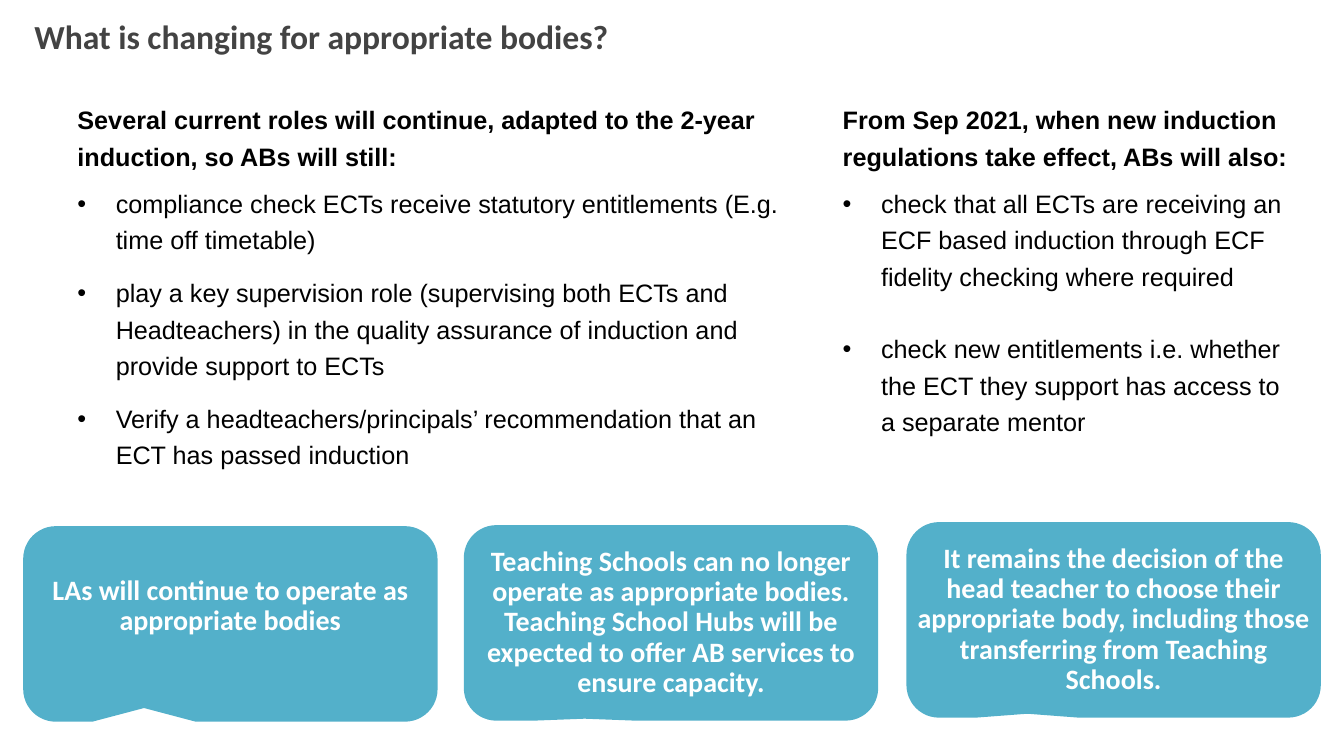
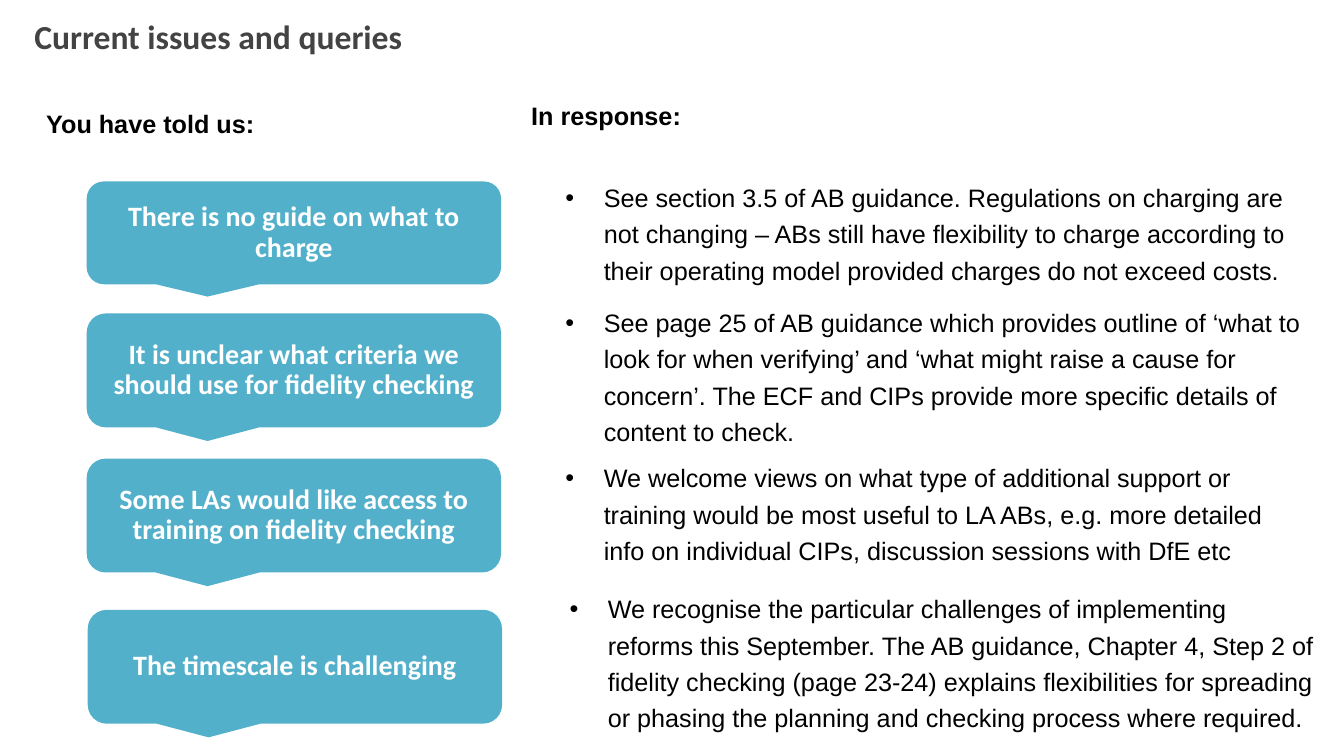
"""Build two slides on changes and queries for appropriate bodies."""
from pptx import Presentation, util as u
from pptx.dml.color import RGBColor
from pptx.enum import shapes, text
from pptx.oxml.ns import qn
from lxml import etree

PX = 9144
GREY = RGBColor(0x43, 0x43, 0x43)
BLUE = RGBColor(0x53, 0xB0, 0xCA)
BLACK = RGBColor(0, 0, 0)
WHITE = RGBColor(255, 255, 255)
HEAD, ITEM = True, False

ROLES = {
    "title": "What is changing for appropriate bodies?",
    "calls": [
        ((23, 522, 411, 194), 0.43, 35,
         "LAs will continue to operate as appropriate bodies"),
        ((460, 521, 411, 194), 0.49, 1,
         "Teaching Schools can no longer operate as appropriate bodies. "
         "Teaching School Hubs will be expected to offer AB services to "
         "ensure capacity."),
        ((899, 518, 411, 194), 0.48, 1,
         "It remains the decision of the head teacher to choose their "
         "appropriate body, including those transferring from Teaching "
         "Schools."),
    ],
    "notes": [
        ((67, 93, 737, 377), [
            (HEAD, 8, "Several current roles will continue, adapted to the "
                      "2-year induction, so ABs will still:"),
            (ITEM, 12, "compliance check ECTs receive statutory entitlements "
                       "(E.g. time off timetable)"),
            (ITEM, 12, "play a key supervision role (supervising both ECTs "
                       "and Headteachers) in the quality assurance of "
                       "induction and provide support to ECTs"),
            (ITEM, 12, "Verify a headteachers/principals’ recommendation "
                       "that an ECT has passed induction")]),
        ((826, 93, 461, 345), [
            (HEAD, 8, "From Sep 2021, when new induction regulations take "
                      "effect, ABs will also:"),
            (ITEM, 26, "check that all ECTs are receiving an ECF based "
                       "induction through ECF fidelity checking where "
                       "required"),
            (ITEM, 12, "check new entitlements i.e. whether the ECT they "
                       "support has access to a separate mentor")]),
    ],
}

ISSUES = {
    "title": "Current issues and queries",
    "calls": [
        ((86, 180, 411, 102), 0.62, 1, "There is no guide on what to charge"),
        ((86, 311, 411, 113), 0.62, 1,
         "It is unclear what criteria we should use for fidelity checking"),
        ((86, 455, 411, 113), 0.62, 1,
         "Some LAs would like access to training on fidelity checking"),
        ((87, 605, 411, 113), 0.62, 1, "The timescale is challenging"),
    ],
    "notes": [
        ((36, 97, 461, 43), [(HEAD, 8, "You have told us:")]),
        ((517, 89, 461, 43), [(HEAD, 8, "In response:")]),
        ((551, 170, 758, 116), [
            (ITEM, 0, "See section 3.5 of AB guidance. Regulations on "
                      "charging are not changing – ABs still have "
                      "flexibility to charge according to their operating "
                      "model provided charges do not exceed costs.")]),
        ((551, 294, 758, 152), [
            (ITEM, 0, "See page 25 of AB guidance which provides outline of "
                      "‘what to look for when verifying’ and ‘what might "
                      "raise a cause for concern’. The ECF and CIPs provide "
                      "more specific details of content to check.")]),
        ((551, 448, 758, 116), [
            (ITEM, 0, "We welcome views on what type of additional support "
                      "or training would be most useful to LA ABs, e.g. more "
                      "detailed info on individual CIPs, discussion sessions "
                      "with DfE etc")]),
        ((555, 578, 758, 152), [
            (ITEM, 0, "We recognise the particular challenges of "
                      "implementing reforms this September. The AB guidance, "
                      "Chapter 4, Step 2 of fidelity checking (page 23-24) "
                      "explains flexibilities for spreading or phasing the "
                      "planning and checking process where required.")]),
    ],
}


def scale(box):
    return [n * PX for n in box]


def style(para, words, face, size, tint, bold, lead):
    para.text = words
    para.line_spacing = lead
    for run in para.runs:
        font = run.font
        font.name, font.size, font.bold = face, u.Pt(size), bold
        font.color.rgb = tint


def inset(frame, pad, foot):
    frame.margin_left = frame.margin_right = frame.margin_top = pad * PX
    frame.margin_bottom = foot * PX
    frame.vertical_anchor = text.MSO_ANCHOR.MIDDLE
    frame.word_wrap = True


def add_title(slide, words):
    title = slide.shapes.title
    title.left, title.top, title.width, title.height = scale((34, 15, 1082, 36))
    frame = title.text_frame
    inset(frame, 0, 0)
    frame.auto_size = text.MSO_AUTO_SIZE.NONE
    para = frame.paragraphs[0]
    style(para, words, "Calibri", 24, GREY, True, 1.15)
    para.alignment = text.PP_ALIGN.LEFT
    para.space_before = u.Pt(10)


def add_call(slide, box, tip, foot, words):
    kind = shapes.MSO_SHAPE.ROUNDED_RECTANGULAR_CALLOUT
    call = slide.shapes.add_shape(kind, *scale(box))
    call.shadow.inherit = False
    call.fill.solid()
    call.fill.fore_color.rgb = BLUE
    call.line.fill.background()
    call.adjustments[1] = tip
    inset(call.text_frame, 1, foot)
    para = call.text_frame.paragraphs[0]
    style(para, words, "Calibri", 20, WHITE, True, 0.9)
    para.alignment = text.PP_ALIGN.CENTER


def add_dot(para):
    props = para._p.get_or_add_pPr()
    props.set("marL", str(38 * PX))
    props.set("indent", str(-38 * PX))
    etree.SubElement(props, qn("a:buFont")).set("typeface", "Arial")
    etree.SubElement(props, qn("a:buChar")).set("char", "•")


def add_note(slide, box, paras):
    frame = slide.shapes.add_textbox(*scale(box)).text_frame
    frame.word_wrap = True
    for i, (head, gap, words) in enumerate(paras):
        para = frame.add_paragraph() if i else frame.paragraphs[0]
        style(para, words, "Arial", 18, BLACK, head, 1.2)
        para.space_after = u.Pt(gap)
        if not head:
            add_dot(para)


def main():
    deck = Presentation()
    deck.slide_width, deck.slide_height = scale((1333, 750))
    for page in (ROLES, ISSUES):
        slide = deck.slides.add_slide(deck.slide_layouts[5])
        add_title(slide, page["title"])
        for call in page["calls"]:
            add_call(slide, *call)
        for note in page["notes"]:
            add_note(slide, *note)
    deck.save("out.pptx")


if __name__ == "__main__":
    main()
